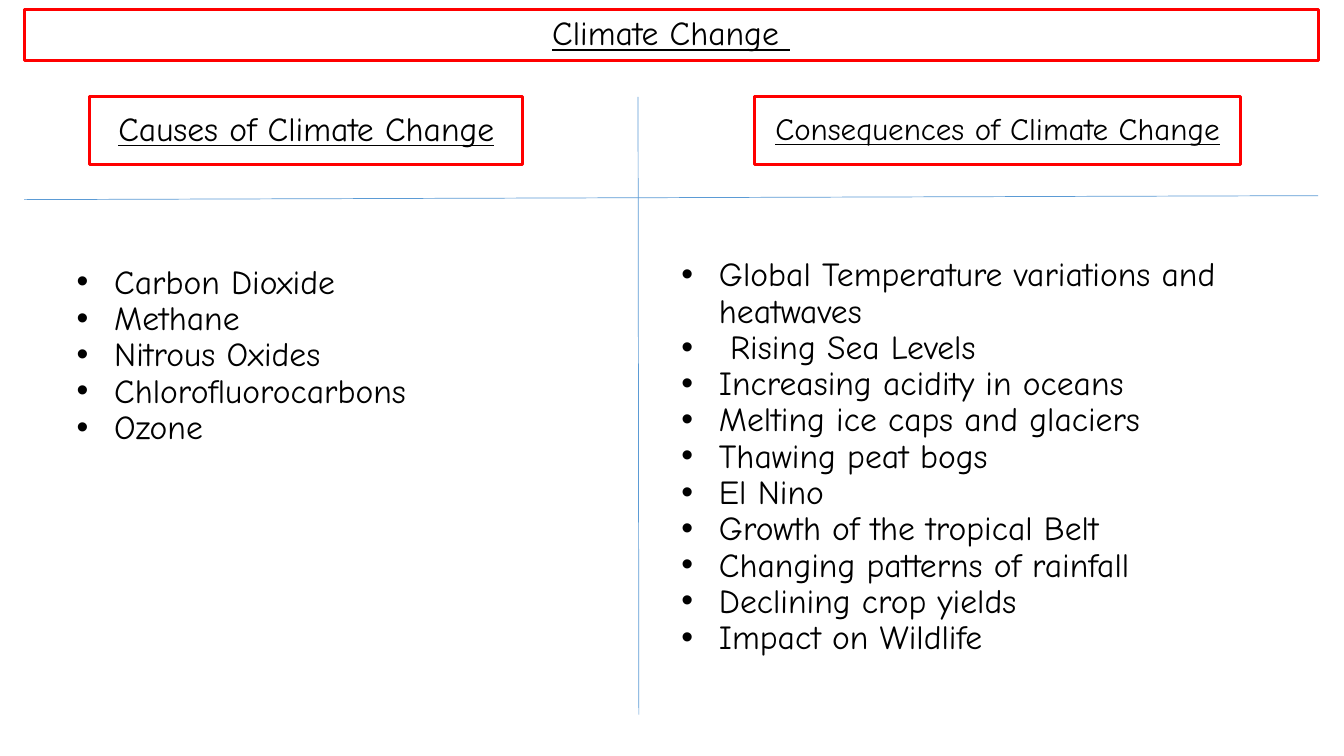
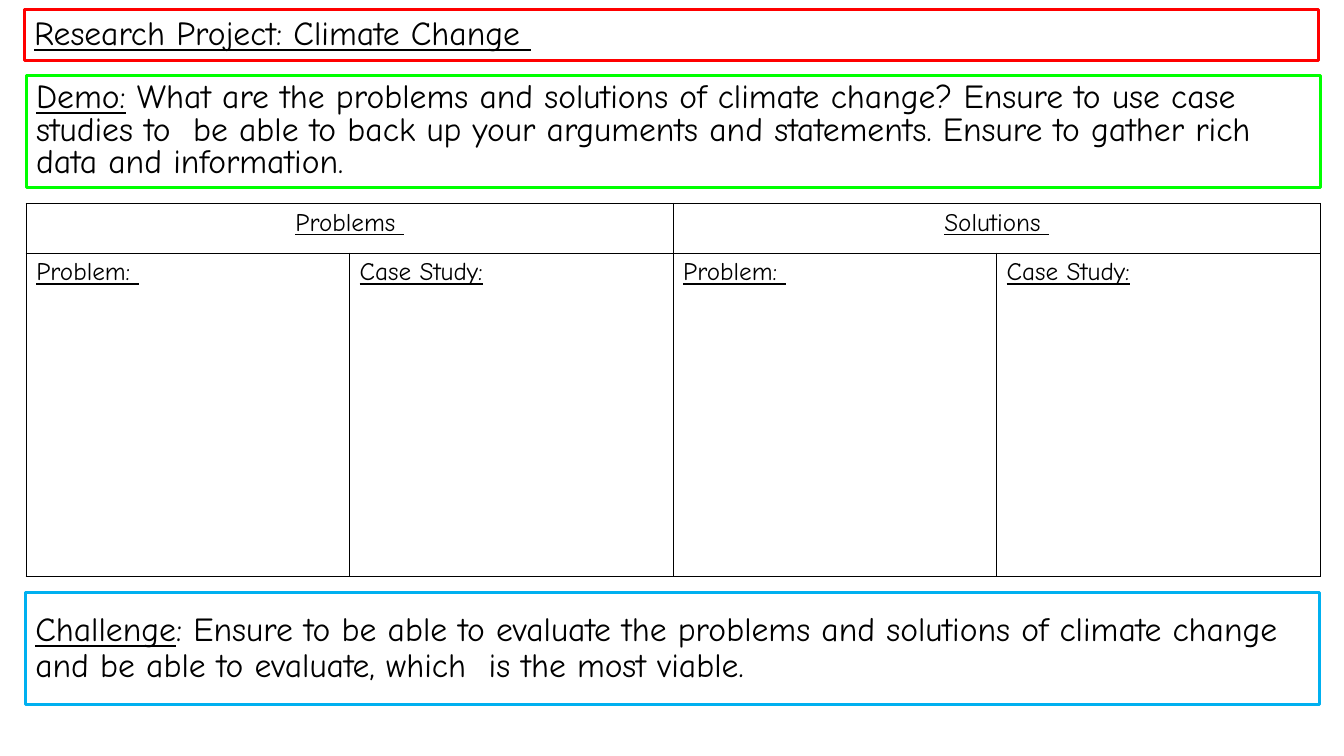
from dataclasses import dataclass

from lxml import etree
from pptx import Presentation
from pptx.dml.color import RGBColor
from pptx.enum.shapes import MSO_CONNECTOR, MSO_SHAPE
from pptx.enum.text import MSO_ANCHOR, PP_ALIGN
from pptx.oxml.ns import qn
from pptx.slide import Slide
from pptx.table import _Cell
from pptx.text.text import _Paragraph
from pptx.util import Cm, Pt

RECT = MSO_SHAPE.RECTANGLE
STRAIGHT = MSO_CONNECTOR.STRAIGHT
MIDDLE = MSO_ANCHOR.MIDDLE
LEFT, CENTER = PP_ALIGN.LEFT, PP_ALIGN.CENTER

BLACK = RGBColor(0x00, 0x00, 0x00)
WHITE = RGBColor(0xFF, 0xFF, 0xFF)
RED = RGBColor(0xFF, 0x00, 0x00)
GREEN = RGBColor(0x00, 0xFF, 0x00)
CYAN = RGBColor(0x00, 0xB0, 0xF0)
BLUE = RGBColor(0x5B, 0x9B, 0xD5)

FONT = "Comic Neue"
BODY_SIZE = 24
TABLE_SIZE = 18
FULL_WIDTH = 32.61
INDENT = Cm(0.95)

CAUSES = [
    "Carbon Dioxide",
    "Methane",
    "Nitrous Oxides",
    "Chlorofluorocarbons",
    "Ozone",
]
CONSEQUENCES = [
    "Global Temperature variations and heatwaves",
    " Rising Sea Levels",
    "Increasing acidity in oceans",
    "Melting ice caps and glaciers",
    "Thawing peat bogs",
    "El Nino",
    "Growth of the tropical Belt",
    "Changing patterns of rainfall",
    "Declining crop yields",
    "Impact on Wildlife",
]
DEMO = (
    " What are the problems and solutions of climate change? Ensure to use case "
    "studies to  be able to back up your arguments and statements. Ensure to gather "
    "rich data and information."
)
CHALLENGE = (
    ": Ensure to be able to evaluate the problems and solutions of climate change "
    "and be able to evaluate, which  is the most viable."
)


@dataclass
class Box:
    left: float
    top: float
    width: float
    height: float
    line: RGBColor
    heading: str = ""
    text: str = ""
    bullets: list[str] | None = None
    align: PP_ALIGN = LEFT
    size: float = BODY_SIZE
    spacing: float = 0.9


@dataclass
class Divider:
    x1: float
    y1: float
    x2: float
    y2: float


def style(p: _Paragraph, size: float, align: PP_ALIGN = LEFT) -> None:
    p.alignment = align
    p.font.name = FONT
    p.font.size = Pt(size)
    p.font.color.rgb = BLACK


def add_bullet(p: _Paragraph) -> None:
    pPr = p._p.get_or_add_pPr()
    pPr.set("marL", str(INDENT))
    pPr.set("indent", str(-INDENT))
    font = etree.Element(qn("a:buFont"), typeface="Arial")
    char = etree.Element(qn("a:buChar"), char="•")
    defaults = pPr.find(qn("a:defRPr"))
    defaults.addprevious(font)
    defaults.addprevious(char)


def add_box(s: Slide, box: Box) -> None:
    sp = s.shapes.add_shape(
        RECT, Cm(box.left), Cm(box.top), Cm(box.width), Cm(box.height)
    )
    sp.shadow.inherit = False
    sp.fill.solid()
    sp.fill.fore_color.rgb = WHITE
    sp.line.color.rgb = box.line
    sp.line.width = Pt(2.25)
    tf = sp.text_frame
    tf.word_wrap = True
    tf.vertical_anchor = MIDDLE
    for i, text in enumerate(box.bullets or [box.text]):
        p = tf.add_paragraph() if i else tf.paragraphs[0]
        style(p, box.size, box.align)
        p.line_spacing = box.spacing
        if box.bullets:
            add_bullet(p)
        if box.heading:
            r = p.add_run()
            r.text = box.heading
            r.font.underline = True
        if text:
            p.add_run().text = text


def add_title(s: Slide, text: str, align: PP_ALIGN) -> None:
    add_box(s, Box(0.61, 0.23, FULL_WIDTH, 1.3, RED, heading=text, align=align))


def add_divider(s: Slide, d: Divider) -> None:
    line = s.shapes.add_connector(STRAIGHT, Cm(d.x1), Cm(d.y1), Cm(d.x2), Cm(d.y2))
    line.line.color.rgb = BLUE
    line.line.width = Pt(0.5)
    etree.SubElement(line._element.spPr, qn("a:effectLst"))


def add_borders(cell: _Cell) -> None:
    tcPr = cell._tc.get_or_add_tcPr()
    for side in ("lnL", "lnR", "lnT", "lnB"):
        ln = etree.SubElement(tcPr, qn(f"a:{side}"), w=str(Pt(1)))
        fill = etree.SubElement(ln, qn("a:solidFill"))
        etree.SubElement(fill, qn("a:srgbClr"), val=str(BLACK))


def write_cell(cell: _Cell, text: str, align: PP_ALIGN) -> None:
    p = cell.text_frame.paragraphs[0]
    style(p, TABLE_SIZE, align)
    p.font.underline = True
    p.add_run().text = text


def add_research_table(s: Slide) -> None:
    heights = [1.25, 8.15]
    frame = s.shapes.add_table(
        2, 4, Cm(0.66), Cm(5.13), Cm(FULL_WIDTH), Cm(sum(heights))
    )
    table = frame.table
    table.first_row = False
    table.horz_banding = False
    for row, height in zip(table.rows, heights):
        row.height = Cm(height)
    for cell in table.iter_cells():
        add_borders(cell)
        cell.fill.solid()
        cell.fill.fore_color.rgb = WHITE
    for i, group in enumerate(["Problems ", "Solutions "]):
        col = 2 * i
        table.cell(0, col).merge(table.cell(0, col + 1))
        write_cell(table.cell(0, col), group, CENTER)
        write_cell(table.cell(1, col), "Problem: ", LEFT)
        write_cell(table.cell(1, col + 1), "Case Study:", LEFT)


def build_overview(s: Slide) -> None:
    add_title(s, "Climate Change ", CENTER)
    for box in (
        Box(2.26, 2.44, 10.92, 1.7, RED, "Causes of Climate Change", align=CENTER),
        Box(19.02, 2.44, 12.24, 1.7, RED, "Consequences of Climate Change",
            align=CENTER, size=22.2),
    ):
        add_box(s, box)
    for divider in (
        Divider(16.08, 2.44, 16.1, 18.01),
        Divider(33.22, 4.93, 0.61, 5.03),
    ):
        add_divider(s, divider)
    add_box(s, Box(16.92, 5.44, 16.31, 12.17, WHITE, bullets=CONSEQUENCES))
    add_box(s, Box(1.68, 6.05, 13.56, 5.84, WHITE, bullets=CAUSES))


def build_research(s: Slide) -> None:
    add_title(s, "Research Project: Climate Change ", LEFT)
    add_research_table(s)
    add_box(s, Box(0.66, 1.9, FULL_WIDTH, 2.82, GREEN, "Demo:", DEMO, spacing=0.8))
    add_box(s, Box(0.64, 14.94, FULL_WIDTH, 2.82, CYAN, "Challenge", CHALLENGE))


def main() -> None:
    prs = Presentation()
    prs.slide_width = Cm(33.87)
    prs.slide_height = Cm(19.05)
    for build in (build_overview, build_research):
        build(prs.slides.add_slide(prs.slide_layouts[6]))
    prs.save("out.pptx")


if __name__ == "__main__":
    main()
